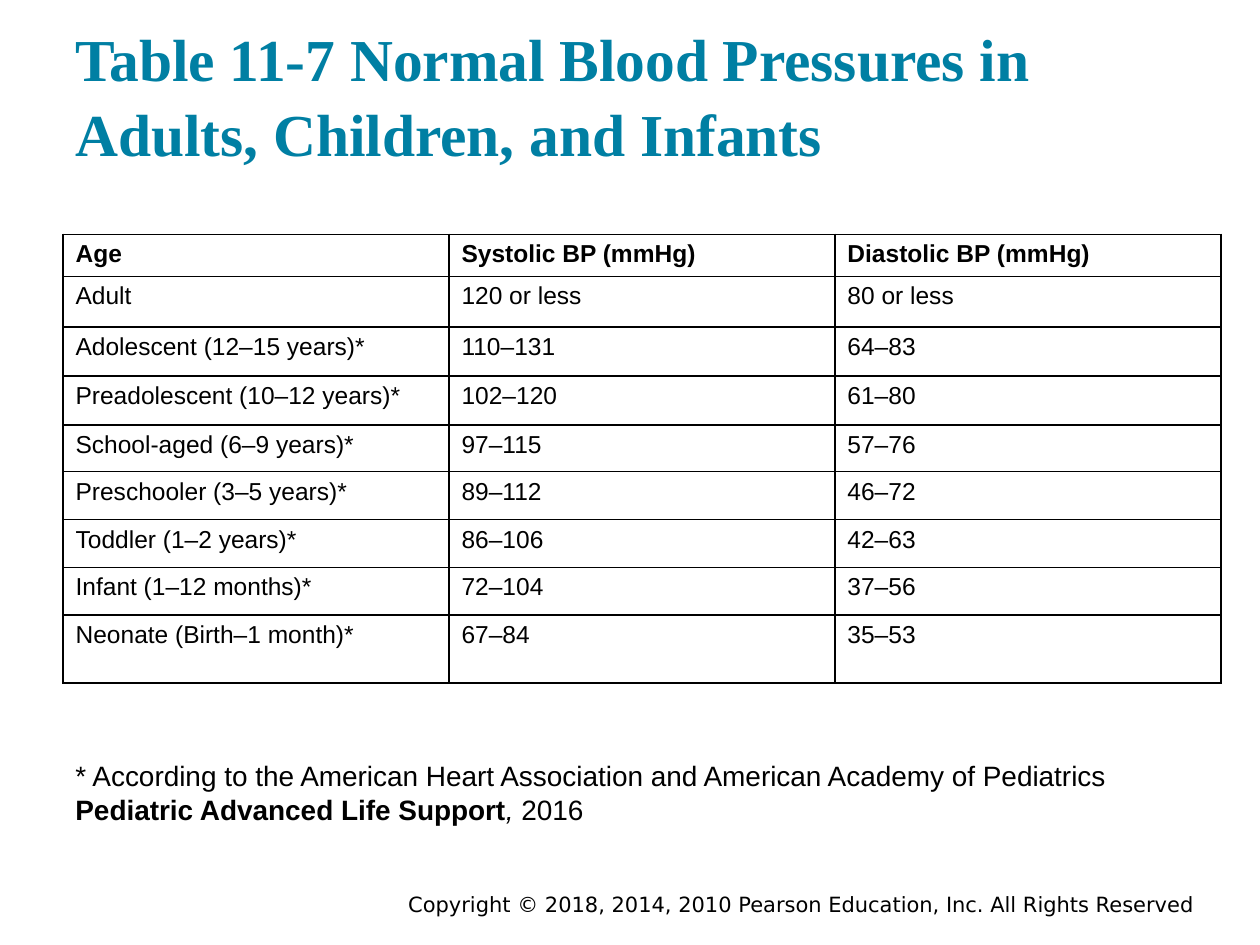
from lxml import etree
from pptx import Presentation
from pptx.dml.color import RGBColor
from pptx.enum.text import MSO_ANCHOR, PP_ALIGN
from pptx.oxml.ns import qn
from pptx.util import Inches, Pt

TOP, MIDDLE, BOTTOM = MSO_ANCHOR.TOP, MSO_ANCHOR.MIDDLE, MSO_ANCHOR.BOTTOM
LEFT, RIGHT = PP_ALIGN.LEFT, PP_ALIGN.RIGHT

THEME = {
    "title": ("Times New Roman", 34, "007FA3"),
    "table": ("Arial", 14, "000000"),
    "note": ("Arial", 16, "000000"),
    "footer": ("DejaVu Sans", 12, "000000"),
    "border": "000000",
}

TITLE = "Table 11-7 Normal Blood Pressures in Adults, Children, and Infants"
ROWS = [
    ("Age", "Systolic BP (mmHg)", "Diastolic BP (mmHg)"),
    ("Adult", "120 or less", "80 or less"),
    ("Adolescent (12–15 years)*", "110–131", "64–83"),
    ("Preadolescent (10–12 years)*", "102–120", "61–80"),
    ("School-aged (6–9 years)*", "97–115", "57–76"),
    ("Preschooler (3–5 years)*", "89–112", "46–72"),
    ("Toddler (1–2 years)*", "86–106", "42–63"),
    ("Infant (1–12 months)*", "72–104", "37–56"),
    ("Neonate (Birth–1 month)*", "67–84", "35–53"),
]
ROW_HEIGHTS = [0.33, 0.4, 0.39, 0.39, 0.37, 0.38, 0.38, 0.38, 0.54]
NOTE = [
    ("* According to the American Heart Association and American Academy of Pediatrics ", False, False),
    ("Pediatric Advanced Life Support", True, False),
    (", ", False, True),
    ("2016", False, False),
]
FOOTER = "Copyright © 2018, 2014, 2010 Pearson Education, Inc. All Rights Reserved"


def style(font, role, bold=False, italic=False):
    name, size, color = THEME[role]
    font.name, font.size = name, Pt(size)
    font.bold, font.italic = bold, italic
    font.color.rgb = RGBColor.from_string(color)


def add_text(s, box, runs, role, anchor=TOP, align=LEFT, inset=0.1):
    tf = s.shapes.add_textbox(*map(Inches, box)).text_frame
    tf.word_wrap = True
    tf.vertical_anchor = anchor
    tf.margin_left = tf.margin_right = Inches(0.1)
    tf.margin_top = tf.margin_bottom = Inches(inset)
    p = tf.paragraphs[0]
    p.alignment = align
    for text, bold, italic in runs:
        r = p.add_run()
        r.text = text
        style(r.font, role, bold, italic)
    return p


def add_borders(cell):
    tc_pr = cell._tc.get_or_add_tcPr()
    for i, side in enumerate(("a:lnL", "a:lnR", "a:lnT", "a:lnB")):
        ln = etree.Element(qn(side), w=str(Pt(1)))
        fill = etree.SubElement(ln, qn("a:solidFill"))
        etree.SubElement(fill, qn("a:srgbClr"), val=THEME["border"])
        tc_pr.insert(i, ln)


def add_pressure_table(s, left, top, width):
    frame = s.shapes.add_table(len(ROWS), len(ROWS[0]), Inches(left), Inches(top),
                               Inches(width), Inches(sum(ROW_HEIGHTS)))
    table = frame.table
    table.horz_banding = False
    for i, (values, height) in enumerate(zip(ROWS, ROW_HEIGHTS)):
        table.rows[i].height = Inches(height)
        for j, value in enumerate(values):
            cell = table.cell(i, j)
            cell.fill.background()
            add_borders(cell)
            p = cell.text_frame.paragraphs[0]
            p.text = value
            style(p.runs[0].font, "table", bold=i == 0)


def main():
    prs = Presentation()
    prs.slide_width, prs.slide_height = Inches(10), Inches(7.5)
    s = prs.slides.add_slide(prs.slide_layouts[6])
    title = add_text(s, (0.5, 0.24, 9, 1.2), [(TITLE, True, False)], "title", BOTTOM)
    title.line_spacing = 1.05
    add_pressure_table(s, 0.5, 1.86, 9.19)
    add_text(s, (0.5, 5.92, 9.19, 0.66), NOTE, "note")
    add_text(s, (2.92, 7.05, 6.66, 0.25), [(FOOTER, False, False)], "footer",
             MIDDLE, RIGHT, inset=0)
    prs.save("out.pptx")


if __name__ == "__main__":
    main()
